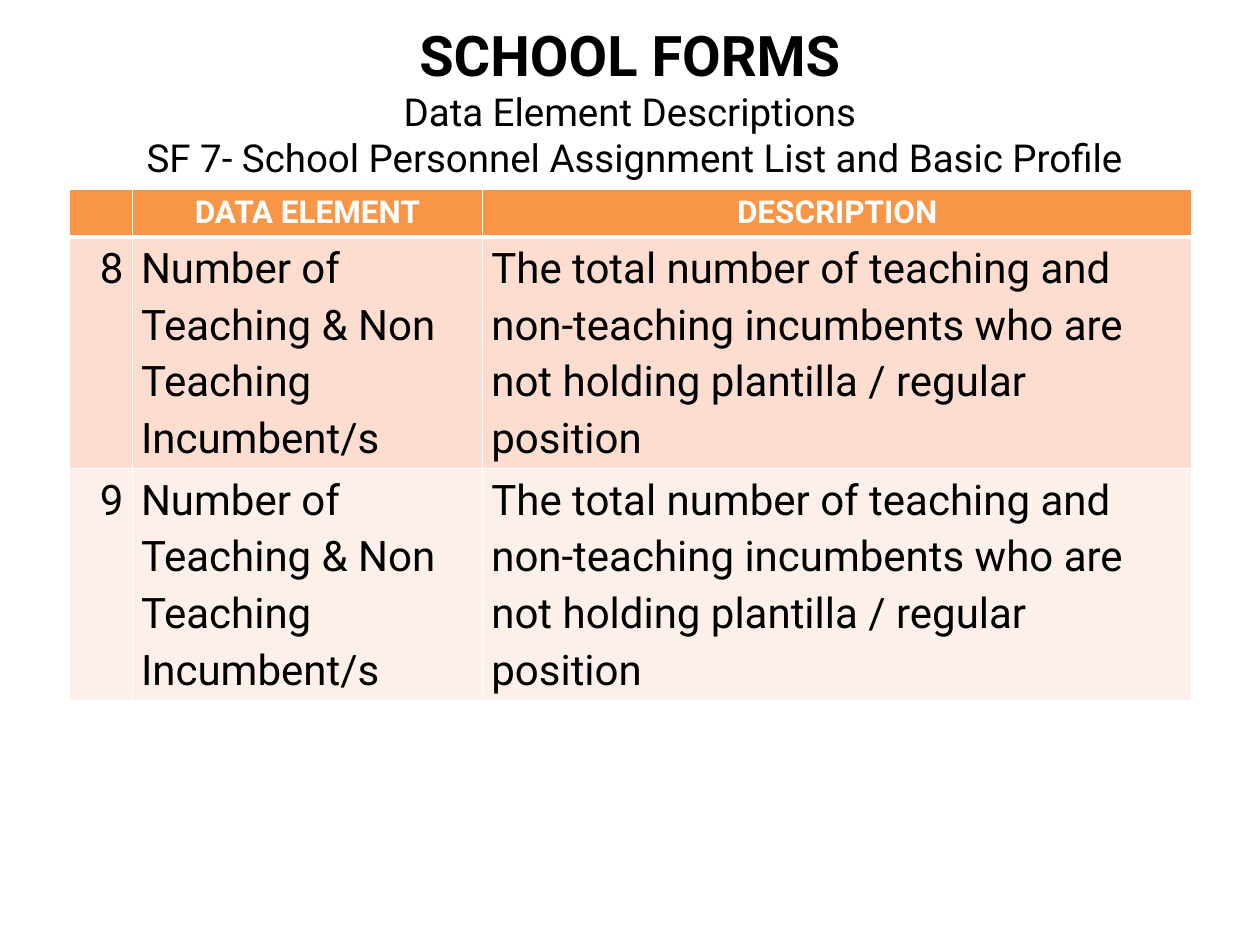
from lxml.etree import SubElement
from pptx import Presentation
from pptx.dml.color import RGBColor
from pptx.enum.text import MSO_ANCHOR as Anchor, PP_ALIGN as Align
from pptx.oxml.ns import qn
from pptx.util import Inches, Pt

FONT = "Roboto"
COLORS = {
    "text": "000000",
    "line": "FFFFFF",
    "header": "F79646",
    "odd": "FCDDCF",
    "even": "FDEFE9",
}
COLUMNS = (0.5, 2.78, 5.63)
ROWS = (0.38, 1.8, 1.8)
ELEMENT = "Number of Teaching & Non Teaching Incumbent/s"
DESCRIPTION = (
    "The total number of teaching and non-teaching incumbents "
    "who are not holding plantilla / regular position"
)
CELLS = (
    ("", "DATA ELEMENT", "DESCRIPTION"),
    ("8", ELEMENT, DESCRIPTION),
    ("9", ELEMENT, DESCRIPTION),
)
HEADING = (
    ("SCHOOL FORMS", 32, True),
    ("Data Element Descriptions", 22, False),
    (" SF 7- School Personnel Assignment List and Basic Profile", 22, False),
)


def color(name):
    return RGBColor.from_string(COLORS[name])


def add_heading(page):
    box = page.shapes.add_textbox(Inches(0.5), Inches(0.17), Inches(9), Inches(1.25))
    frame = box.text_frame
    frame.word_wrap = True
    frame.vertical_anchor = Anchor.MIDDLE
    para = frame.paragraphs[0]
    para.alignment = Align.CENTER
    para.font.name = FONT
    for index, (text, size, bold) in enumerate(HEADING):
        if index:
            para.add_line_break()
        span = para.add_run()
        span.text = text
        span.font.name = FONT
        span.font.size = Pt(size)
        span.font.bold = bold
        span.font.color.rgb = color("text")


def set_borders(cell, widths):
    properties = cell._tc.get_or_add_tcPr()
    for side, width in widths.items():
        line = SubElement(properties, qn(f"a:ln{side}"), w=str(Pt(width)))
        fill = SubElement(line, qn("a:solidFill"))
        SubElement(fill, qn("a:srgbClr"), val=COLORS["line"])


def fill_cell(cell, text, row, column):
    header = row == 0
    set_borders(cell, {"L": 1, "R": 1, "T": 3 if row == 1 else 1, "B": 3 if header else 1})
    cell.fill.solid()
    cell.fill.fore_color.rgb = color("header" if header else "odd" if row % 2 else "even")
    cell.margin_left = cell.margin_right = Inches(0.07)
    cell.margin_top = cell.margin_bottom = 0
    para = cell.text_frame.paragraphs[0]
    para.text = text
    para.line_spacing = 1.15
    para.alignment = Align.CENTER if header else Align.LEFT if column else Align.RIGHT
    para.font.name = FONT
    para.font.size = Pt(18 if header else 24)
    para.font.bold = header
    para.font.color.rgb = color("line" if header else "text")


def add_data_table(page):
    frame = page.shapes.add_table(
        len(ROWS), len(COLUMNS), Inches(0.55), Inches(1.5),
        Inches(sum(COLUMNS)), Inches(sum(ROWS)),
    )
    table = frame.table
    for column, width in zip(table.columns, COLUMNS):
        column.width = Inches(width)
    for row, height in zip(table.rows, ROWS):
        row.height = Inches(height)
    for row, texts in enumerate(CELLS):
        for column, text in enumerate(texts):
            fill_cell(table.cell(row, column), text, row, column)


def main():
    deck = Presentation()
    deck.slide_width, deck.slide_height = Inches(10), Inches(7.5)
    page = deck.slides.add_slide(deck.slide_layouts[6])
    add_heading(page)
    add_data_table(page)
    deck.save("out.pptx")


if __name__ == "__main__":
    main()
